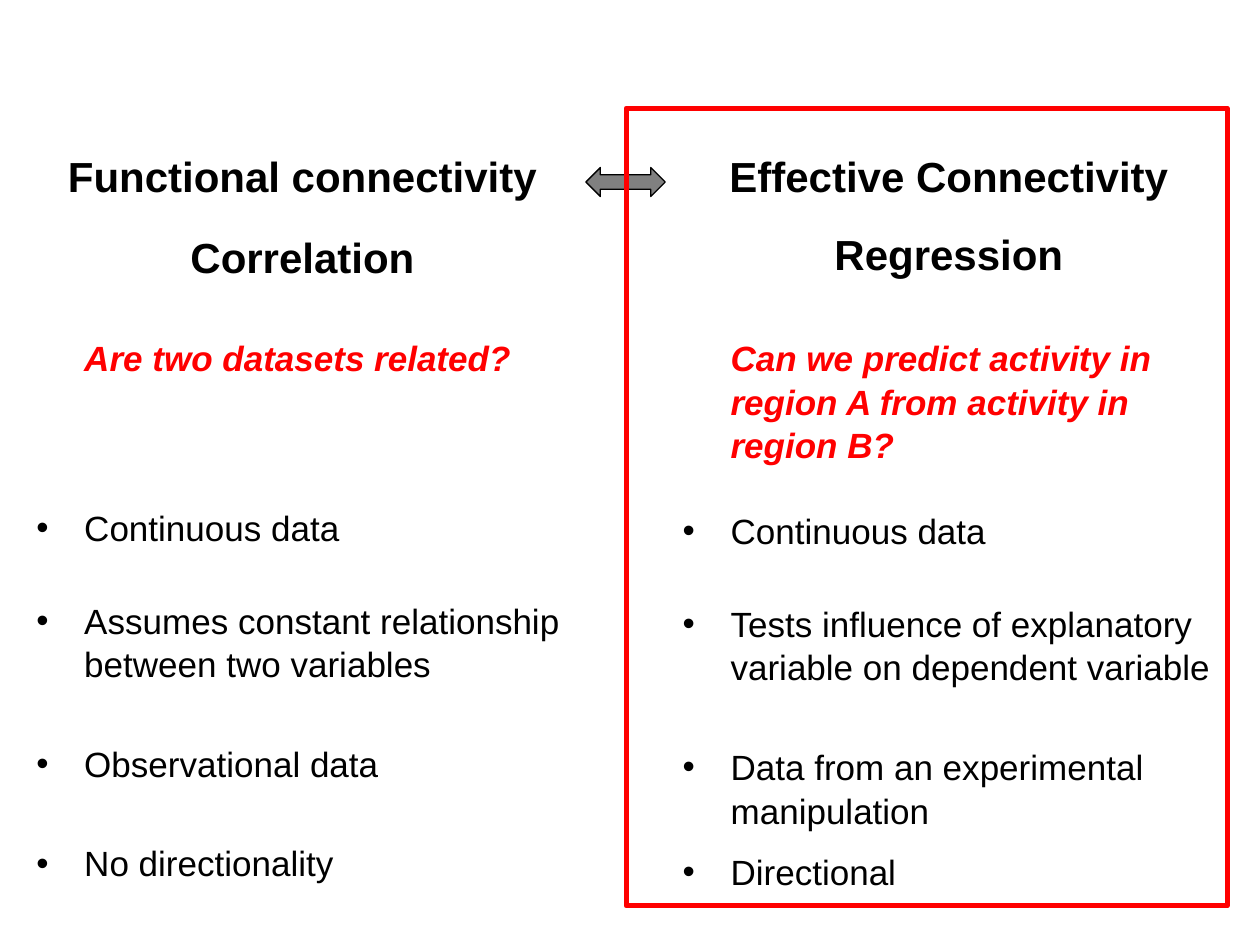
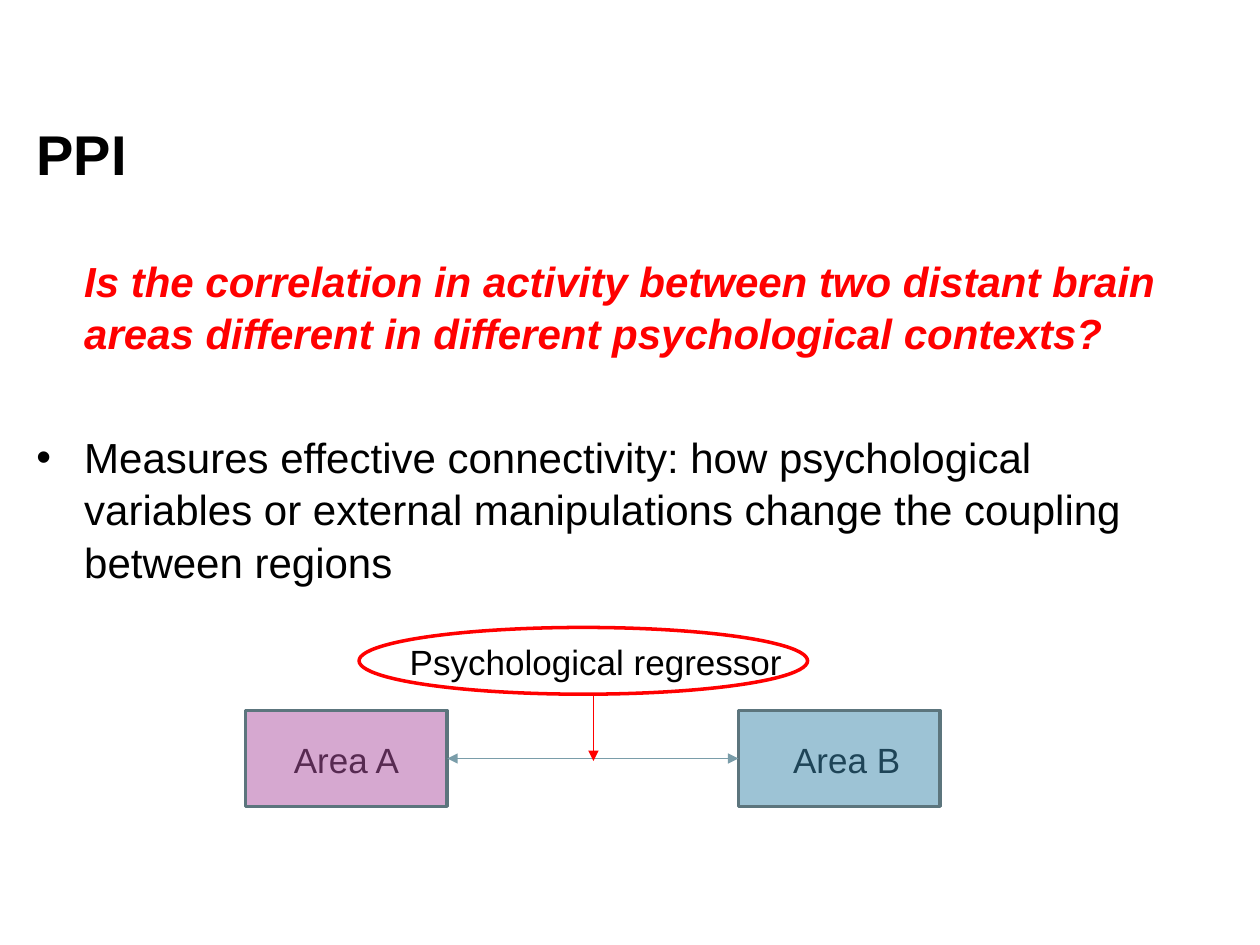
from lxml.etree import SubElement
from pptx import Presentation
from pptx.dml.color import RGBColor
from pptx.enum.shapes import MSO_CONNECTOR, MSO_SHAPE
from pptx.enum.text import MSO_ANCHOR, PP_ALIGN
from pptx.oxml.ns import qn
from pptx.util import Inches, Pt

# Shared look
FONT = "Arial"
BLACK = RGBColor(0, 0, 0)
RED = RGBColor(0xFF, 0, 0)
GRAY = RGBColor(0x80, 0x80, 0x80)
SLATE = RGBColor(0x5C, 0x75, 0x7D)
STEEL = RGBColor(0x7A, 0x9D, 0xA9)
PINK = RGBColor(0xAE, 0x53, 0xA2)
PLUM = RGBColor(0x57, 0x2A, 0x51)
BLUE = RGBColor(0x3D, 0x89, 0xAD)
NAVY = RGBColor(0x1E, 0x44, 0x57)
LEFT = 0.19
INDENT = 0.38
PITCH = 1.04
INSETS = (0.1, 0.05, 0.1, 0.05)

# Content: bullets carry the space before them in points
COLUMNS = [
    dict(x=LEFT, kind="Functional connectivity", method="Correlation",
         top=1.59, high=4.32, ask="Are two datasets related?",
         points=[("Continuous data", 72),
                 ("Assumes constant relationship between two variables", 28),
                 ("Observational data", 32),
                 ("No directionality", 32)]),
    dict(x=5.32, kind="Effective Connectivity", method="Regression",
         top=1.56, high=4.53,
         ask="Can we predict activity in region A from activity in region B?",
         points=[("Continuous data", 24),
                 ("Tests influence of explanatory variable on dependent variable", 28),
                 ("Data from an experimental manipulation", 32),
                 ("Directional", 10)]),
]
TITLE = "PPI"
ASK = ("Is the correlation in activity between two distant brain areas "
       "different in different psychological contexts?")
POINT = ("Measures effective connectivity: how psychological variables or "
         "external manipulations change the coupling between regions")
CAUSE = "Psychological regressor"
# Label, left edge, fill, text colour, left inset
AREAS = [("Area A", 1.95, PINK, PLUM, 0), ("Area B", 5.86, BLUE, NAVY, 0.12)]


def write(frame, text, size=20, color=BLACK, bold=False, slant=False,
          align=PP_ALIGN.LEFT, indent=0, bullet=False, before=0, first=True):
    para = frame.paragraphs[0] if first else frame.add_paragraph()
    para.alignment = align
    para.line_spacing = PITCH
    if before:
        para.space_before = Pt(before)
    props = para._p.get_or_add_pPr()
    props.set("marL", str(Inches(indent)))
    props.set("indent", str(-Inches(indent) if bullet else 0))
    if bullet:
        SubElement(props, qn("a:buFont")).set("typeface", FONT)
        SubElement(props, qn("a:buChar")).set("char", "•")
    run = para.add_run()
    run.text = text
    font = run.font
    font.name, font.size = FONT, Pt(size)
    font.bold, font.italic = bold, slant
    font.color.rgb = color


def pad(frame, insets):
    (frame.margin_left, frame.margin_top,
     frame.margin_right, frame.margin_bottom) = map(Inches, insets)


def add_box(slide, x, y, wide, high, anchor=MSO_ANCHOR.TOP, insets=INSETS):
    frame = slide.shapes.add_textbox(*map(Inches, (x, y, wide, high))).text_frame
    frame.word_wrap = True
    frame.vertical_anchor = anchor
    pad(frame, insets)
    return frame


def add_head(slide, text, x, y, wide, **style):
    frame = add_box(slide, x, y, wide, 0.7, MSO_ANCHOR.BOTTOM)
    write(frame, text, bold=True, **style)


def draw(slide, kind, x, y, wide, high, line, width, fill=None, alpha=None):
    shape = slide.shapes.add_shape(kind, *map(Inches, (x, y, wide, high)))
    shape.shadow.inherit = False
    shape.line.color.rgb = line
    shape.line.width = Pt(width)
    if fill is None:
        shape.fill.background()
    else:
        shape.fill.solid()
        shape.fill.fore_color.rgb = fill
    if alpha:
        tint = shape._element.spPr.find(qn("a:solidFill")).find(qn("a:srgbClr"))
        SubElement(tint, qn("a:alpha")).set("val", str(alpha * 1000))
    return shape


def label(shape, text, color=BLACK, left=0):
    frame = shape.text_frame
    frame.word_wrap = False
    frame.vertical_anchor = MSO_ANCHOR.MIDDLE
    pad(frame, (left, 0, 0, 0))
    write(frame, text, color=color, align=PP_ALIGN.CENTER)


def link(slide, start, end, color, ends):
    line = slide.shapes.add_connector(
        MSO_CONNECTOR.STRAIGHT, *map(Inches, start + end))
    line.line.color.rgb = color
    line.line.width = Pt(0.75)
    props = line._element.spPr
    for tip in ends:
        SubElement(props.find(qn("a:ln")), qn("a:" + tip)).set("type", "triangle")
    SubElement(props, qn("a:effectLst"))
    return line


def compare(slide):
    # Two columns: headings, question, bullets
    wide = 4.42
    for col in COLUMNS:
        x = col["x"]
        for text, y in ((col["kind"], 0.94), (col["method"], col["top"])):
            add_head(slide, text, x, y, wide, size=24, align=PP_ALIGN.CENTER)
        body = add_box(slide, x, 2.61, wide, col["high"])
        write(body, col["ask"], color=RED, bold=True, slant=True, indent=INDENT)
        for text, gap in col["points"]:
            write(body, text, indent=INDENT, bullet=True, before=gap, first=False)

    # Arrow between headings, frame round the right column
    draw(slide, MSO_SHAPE.LEFT_RIGHT_ARROW, 4.65, 1.33, 0.63, 0.23,
         BLACK, 0.75, GRAY)
    draw(slide, MSO_SHAPE.RECTANGLE, 4.97, 0.86, 4.77, 6.33, RED, 3)


def explain(slide):
    # Title, question and definition
    add_head(slide, TITLE, LEFT, 0.83, 9.02, size=32)
    write(add_box(slide, LEFT, 3.36, 9.02, 1.5), POINT, size=24,
          indent=INDENT, bullet=True)
    write(add_box(slide, LEFT, 1.91, 9.45, 1.37, insets=(0.1,) * 4), ASK,
          size=24, color=RED, bold=True, slant=True, indent=INDENT)

    # Regressor acting on the link between two areas
    cause = draw(slide, MSO_SHAPE.OVAL, 2.85, 4.98, 3.56, 0.53, RED, 2)
    label(cause, CAUSE, left=0.2)
    top, wide, high = 5.64, 1.6, 0.76
    mid = top + high / 2
    boxes = []
    for text, x, fill, color, left in AREAS:
        box = draw(slide, MSO_SHAPE.RECTANGLE, x, top, wide, high,
                   SLATE, 2, fill, alpha=50)
        label(box, text, color, left)
        boxes.append(box)
    pair = link(slide, (AREAS[0][1] + wide, mid), (AREAS[1][1], mid),
                STEEL, ("headEnd", "tailEnd"))
    pair.begin_connect(boxes[0], 3)
    pair.end_connect(boxes[1], 1)
    link(slide, (4.71, 5.52), (4.71, 6.04), RED, ("tailEnd",))


def main():
    deck = Presentation()
    deck.slide_width, deck.slide_height = Inches(10), Inches(7.5)
    for build in (compare, explain):
        build(deck.slides.add_slide(deck.slide_layouts[6]))
    deck.save("out.pptx")


if __name__ == "__main__":
    main()
